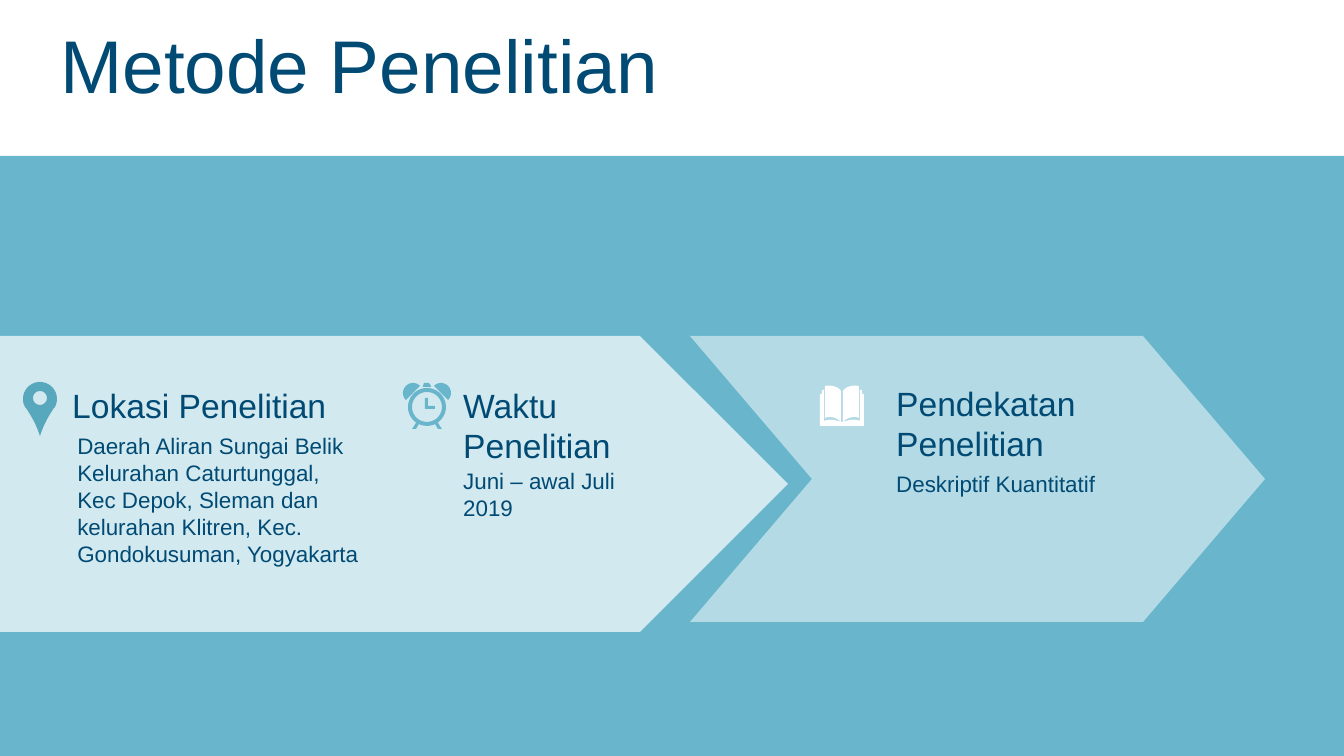
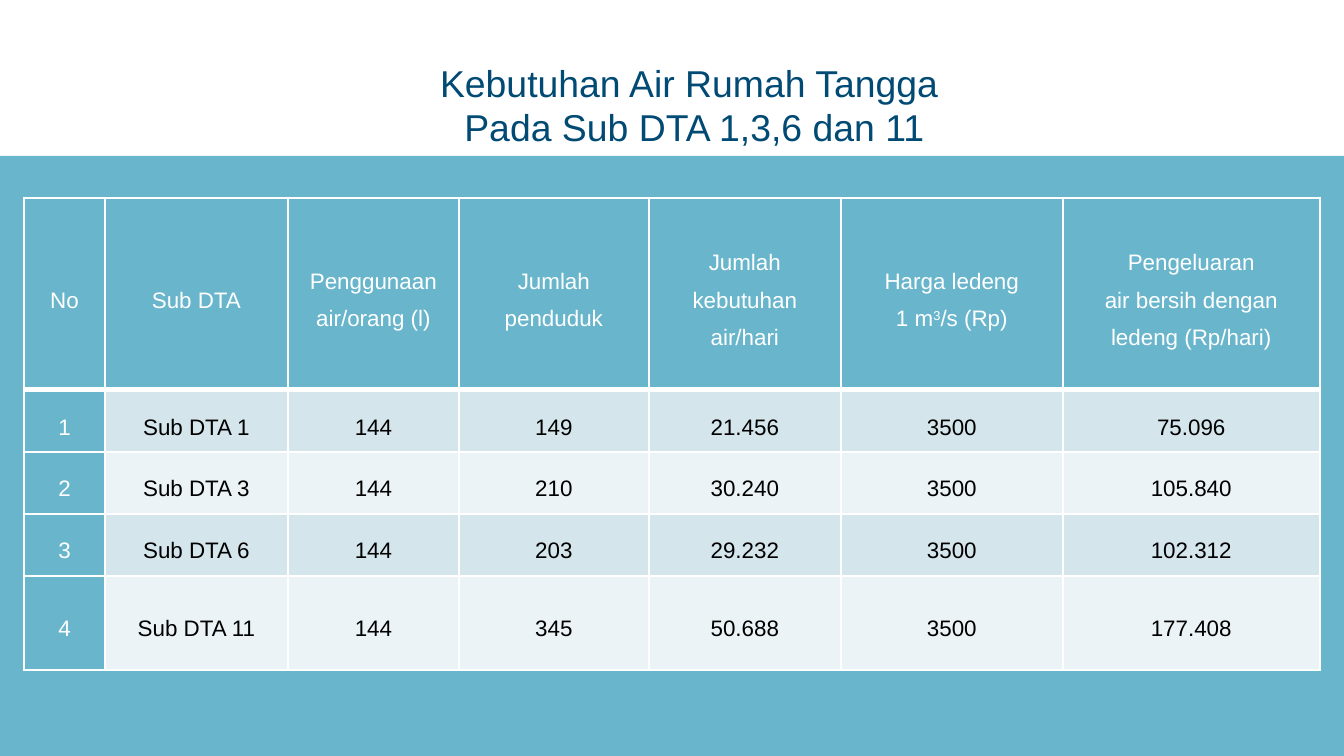
import math

import lxml.etree
import pptx
import pptx.dml.color
import pptx.enum.shapes
import pptx.enum.text
import pptx.oxml.ns
import pptx.util

PX = 914400 / 134.4
WIDTH, HEIGHT, BAND_TOP = 1344, 756, 156
FONT = "Arial"
COLORS = {
    "navy": "004A74",
    "band": "69B6CC",
    "pin": "57A7BD",
    "white": "FFFFFF",
    "black": "000000",
    "odd": "D4E5EC",
    "even": "EBF3F6",
}
ALIGN = pptx.enum.text.PP_ALIGN
ANCHOR = pptx.enum.text.MSO_ANCHOR
SHAPE = pptx.enum.shapes.MSO_SHAPE
qn = pptx.oxml.ns.qn

COLUMNS = [81, 183, 171, 190, 192, 222, 257]
ROWS = [192, 62, 62, 62, 94]
TABLE = [
    ["No", "Sub DTA", "Penggunaan\nair/orang (l)", "Jumlah\npenduduk",
     "Jumlah\nkebutuhan\nair/hari", "Harga ledeng\n1 m^3^/s (Rp)",
     "Pengeluaran\nair bersih dengan\nledeng (Rp/hari)"],
    ["1", "Sub DTA 1", "144", "149", "21.456", "3500", "75.096"],
    ["2", "Sub DTA 3", "144", "210", "30.240", "3500", "105.840"],
    ["3", "Sub DTA 6", "144", "203", "29.232", "3500", "102.312"],
    ["4", "Sub DTA 11", "144", "345", "50.688", "3500", "177.408"],
]


def px(n):
    return pptx.util.Emu(round(n * PX))


def rgb(name):
    return pptx.dml.color.RGBColor.from_string(COLORS[name])


def write(tf, text, size=12, color="navy", align=ALIGN.LEFT, spacing=None):
    for i, line in enumerate(text.split("\n")):
        p = tf.paragraphs[0] if i == 0 else tf.add_paragraph()
        p.alignment = align
        p.space_before = pptx.util.Pt(0)
        if spacing:
            p.line_spacing = spacing
        for j, part in enumerate(line.split("\v")):
            if j:
                p.add_line_break()
            for k, piece in enumerate(part.split("^")):
                r = p.add_run()
                r.text = piece
                r.font.size = pptx.util.Pt(size)
                r.font.name = FONT
                r.font.bold = False
                r.font.color.rgb = rgb(color)
                if k % 2:
                    r._r.get_or_add_rPr().set("baseline", "30000")


def paint(sp, color, alpha=None):
    sp.shadow.inherit = False
    sp.line.fill.background()
    sp.fill.solid()
    sp.fill.fore_color.rgb = rgb(color)
    if alpha:
        clr = sp._element.spPr.find(qn("a:solidFill"))[0]
        lxml.etree.SubElement(clr, qn("a:alpha")).set("val", str(alpha * 1000))


def add_preset(s, kind, x, y, w, h, color, alpha=None):
    sp = s.shapes.add_shape(kind, px(x), px(y), px(w), px(h))
    paint(sp, color, alpha)
    return sp


def add_outline(s, x, y, contours, color, alpha=None):
    fb = None
    for contour in contours:
        points = [(px(x + a), px(y + b)) for a, b in contour]
        if fb is None:
            fb = s.shapes.build_freeform(*points[0])
        else:
            fb.move_to(*points[0])
        fb.add_line_segments(points[1:], close=True)
    paint(fb.convert_to_shape(), color, alpha)


def arc(cx, cy, r, start=0, sweep=360, steps=36):
    angles = [math.radians(start + sweep * i / steps) for i in range(steps + 1)]
    return [(cx + r * math.cos(a), cy + r * math.sin(a)) for a in angles]


def curve(p0, p1, p2, p3, steps=8):
    points = []
    for i in range(steps + 1):
        t = i / steps
        weights = ((1 - t) ** 3, 3 * t * (1 - t) ** 2, 3 * t * t * (1 - t), t ** 3)
        points.append(tuple(sum(w * p[k] for w, p in zip(weights, (p0, p1, p2, p3)))
                            for k in (0, 1)))
    return points


def mirror(points, axis):
    return [(2 * axis - a, b) for a, b in points]


def add_pin(s, x, y):
    side = curve((31, 26), (25, 35), (21, 42), (17, 54))
    body = arc(17, 17, 17, 150, 240) + side + mirror(side, 17)[::-1]
    add_outline(s, x, y, [body, arc(17, 16, 7)], "pin")


def add_clock(s, x, y):
    ear = arc(10, 11, 10, 135, 180)
    foot = [(13, 41), (9, 47), (13, 47), (16, 42)]
    cap = [(20, 4), (21, 1), (26, 1), (28, 4), (28, 5), (20, 5)]
    hands = [(22, 16), (25, 16), (25, 24), (32, 24), (32, 27), (22, 27)]
    parts = [arc(24, 25, 19), arc(24, 25, 15), cap, hands]
    for part in (ear, foot):
        parts += [part, mirror(part, 24)]
    add_outline(s, x, y, parts, "band")


def add_book(s, x, y):
    half = (curve((23, 37), (29, 35), (34, 34), (40, 36))
            + [(40, 5), (39, 5)]
            + curve((39, 33), (34, 31), (28, 32), (23, 37))
            + curve((23, 6), (26, 2), (31, 0), (39, 1))
            + [(39, 5), (42, 5), (42, 9), (44, 9), (44, 41)])
    add_outline(s, x, y, [half + mirror(half, 22)[::-1]], "white")


def add_base(prs, title, x, y, w, h, **fmt):
    s = prs.slides.add_slide(prs.slide_layouts[5])
    add_preset(s, SHAPE.RECTANGLE, 0, BAND_TOP, WIDTH, HEIGHT - BAND_TOP, "band")
    sp = s.shapes.title
    sp.left, sp.top, sp.width, sp.height = px(x), px(y), px(w), px(h)
    tf = sp.text_frame
    tf.word_wrap = True
    tf.auto_size = pptx.enum.text.MSO_AUTO_SIZE.NONE
    tf.vertical_anchor = ANCHOR.MIDDLE
    write(tf, title, **fmt)
    return s


def add_topic(s, x, y, head, head_box, detail, detail_box):
    grp = s.shapes.add_group_shape()
    for text, (dx, dy, w, h), size in ((head, head_box, 18), (detail, detail_box, 12)):
        sp = grp.shapes.add_textbox(px(x + dx), px(y + dy), px(w), px(h))
        sp.text_frame.word_wrap = True
        write(sp.text_frame, text, size=size)


def add_chevron(s, x, y, w, h, depth):
    add_outline(s, x, y, [[(0, 0), (w - depth, 0), (w, h / 2), (w - depth, h),
                           (0, h), (depth, h / 2)]], "white", 50)


def add_borders(cell, bottom):
    tcPr = cell._tc.get_or_add_tcPr()
    for side, width in (("L", 1), ("R", 1), ("T", 1), ("B", bottom)):
        ln = lxml.etree.SubElement(tcPr, qn("a:ln" + side))
        ln.set("w", str(pptx.util.Pt(width)))
        fill = lxml.etree.SubElement(ln, qn("a:solidFill"))
        lxml.etree.SubElement(fill, qn("a:srgbClr")).set("val", COLORS["white"])


def add_water_table(s, x, y):
    frame = s.shapes.add_table(len(ROWS), len(COLUMNS), px(x), px(y),
                               px(sum(COLUMNS)), px(sum(ROWS)))
    table = frame.table
    table.first_col = True
    for column, w in zip(table.columns, COLUMNS):
        column.width = px(w)
    for row, h in zip(table.rows, ROWS):
        row.height = px(h)
    for i, values in enumerate(TABLE):
        for j, value in enumerate(values):
            cell = table.cell(i, j)
            heading = i == 0 or j == 0
            cell.margin_left = cell.margin_right = px(9)
            cell.margin_top = cell.margin_bottom = 0
            cell.vertical_anchor = ANCHOR.MIDDLE
            add_borders(cell, 3 if i == 0 else 1)
            cell.fill.solid()
            cell.fill.fore_color.rgb = rgb(
                "band" if heading else "odd" if i % 2 else "even")
            write(cell.text_frame, value, color="white" if heading else "black",
                  align=ALIGN.CENTER, spacing=1.5)


def method_slide(prs):
    s = add_base(prs, "Metode Penelitian", 47, 21, 1297, 85, size=40)
    add_chevron(s, 690, 336, 575, 286, 122)
    add_preset(s, SHAPE.PENTAGON, 0, 336, 788, 296, "white", 70)
    add_book(s, 820, 385)
    add_topic(s, 59, 378, "Lokasi Penelitian", (0, 0, 324, 54),
              "Daerah Aliran Sungai Belik Kelurahan Caturtunggal, Kec Depok, Sleman "
              "dan kelurahan Klitren, Kec. Gondokusuman, Yogyakarta", (5, 48, 313, 176))
    add_topic(s, 450, 378, "Waktu\nPenelitian", (0, 0, 313, 95),
              "Juni – awal Juli 2019", (0, 83, 228, 67))
    add_topic(s, 883, 376, "Pendekatan Penelitian", (0, 0, 310, 95),
              "Deskriptif Kuantitatif", (0, 88, 259, 40))
    add_pin(s, 23, 382)
    add_clock(s, 403, 382)


def water_slide(prs):
    s = add_base(prs, "Kebutuhan Air Rumah Tangga \vPada Sub DTA 1,3,6 dan 11",
                 46, 62, 1297, 85, size=20, align=ALIGN.CENTER)
    add_water_table(s, 24, 198)


def main():
    prs = pptx.Presentation()
    prs.slide_width, prs.slide_height = px(WIDTH), px(HEIGHT)
    method_slide(prs)
    water_slide(prs)
    prs.save("out.pptx")


if __name__ == "__main__":
    main()
